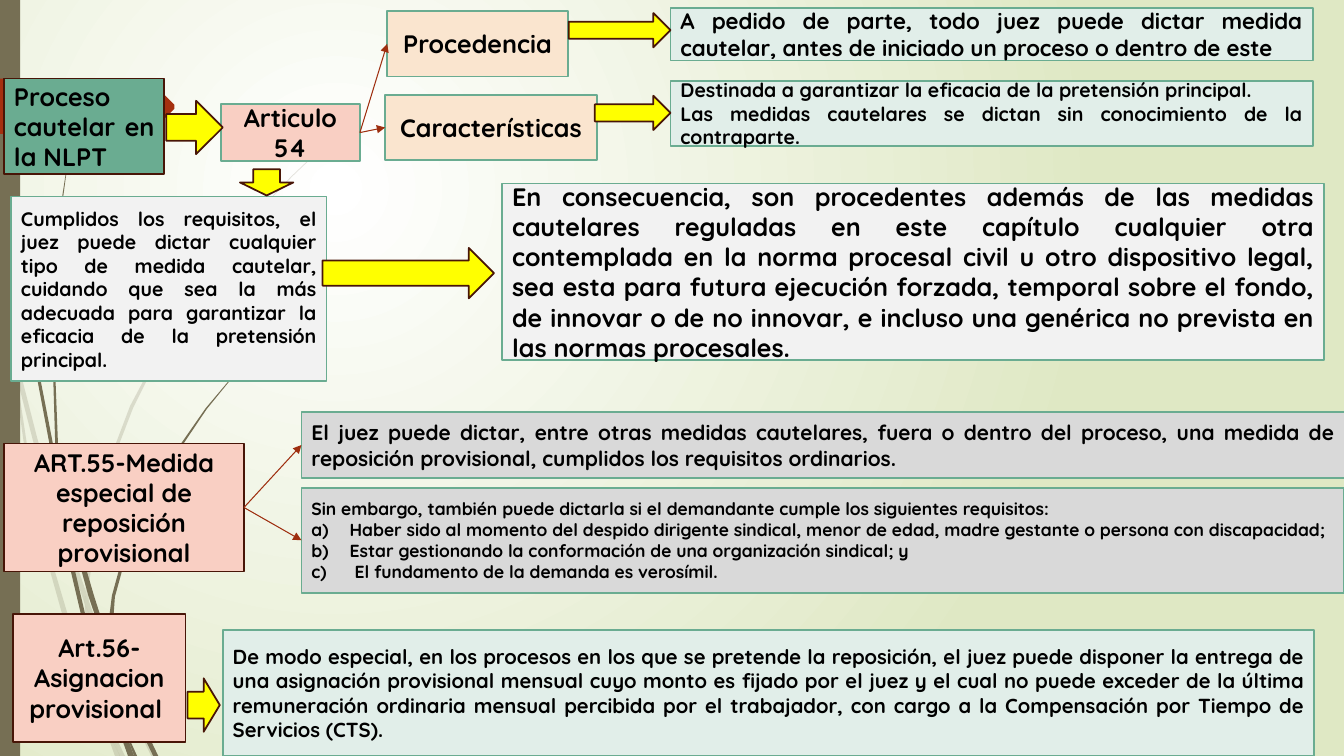
"""Builds a one-slide diagram of precautionary measures in labour procedure."""
from lxml import etree
from pptx import Presentation, util as u
from pptx.dml.color import RGBColor
from pptx.enum import shapes, text
from pptx.oxml.ns import qn

THEME = {
    "font": "Quicksand", "ink": "000000", "wisp": "766F54", "ribbon": "A53010",
    "green": "6AAC91", "pink": "F9CFC3", "peach": "FAE5CF", "mint": "E1EEE9",
    "pale": "F2F2F2", "gray": "D9D9D9", "yellow": "FFFF00", "dark": "481507",
    "link": "9E2E0F", "glow": "FFFFFF", "edge": "DFE8C4",
    "title": 18, "lead": 16, "order": 15, "grant": 14.5, "body": 14, "list": 12.5,
    "border": 1.25, "thin": 0.75,
}

BOXES = {
    "proceso": ((0.04, 0.78, 1.59, 0.95), "green", "dark", "title", "j",
                ["Proceso cautelar en la NLPT"]),
    "articulo": ((2.19, 1.03, 1.38, 0.57), "pink", "green", "title", "c", ["Articulo 54"]),
    "procedencia": ((3.84, 0.11, 1.79, 0.65), "peach", "green", "title", "c", ["Procedencia"]),
    "caracteristicas": ((3.82, 0.94, 2.1, 0.65), "peach", "green", "title", "c",
                        ["Características"]),
    "pedido": ((6.65, 0.08, 6.37, 0.52), "mint", "green", "lead", "j",
               ["A pedido de parte, todo juez puede dictar medida cautelar, antes de iniciado "
                "un proceso o dentro de este"]),
    "cumplidos": ((0.11, 1.95, 3.13, 1.83), "pale", "green", "body", "j",
                  ["Cumplidos los requisitos, el juez puede dictar cualquier tipo de medida "
                   "cautelar, cuidando que sea la más adecuada para garantizar la eficacia de "
                   "la pretensión principal."]),
    "consecuencia": ((4.98, 1.82, 8.15, 1.75), "pale", "green", "title", "j",
                     ["En consecuencia, son procedentes además de las medidas cautelares "
                      "reguladas en este capítulo cualquier otra contemplada en la norma procesal "
                      "civil u otro dispositivo legal, sea esta para futura ejecución forzada, "
                      "temporal sobre el fondo, de innovar o de no innovar, e incluso una genérica "
                      "no prevista en las normas procesales."]),
    "destinada": ((6.65, 0.8, 6.37, 0.65), "mint", "green", "body", "j",
                  ["Destinada a garantizar la eficacia de la pretensión principal.",
                   "Las medidas cautelares se dictan sin conocimiento de la contraparte."]),
    "reposicion": ((2.99, 4.09, 10.35, 0.65), "gray", "green", "order", "j",
                   ["El juez puede dictar, entre otras medidas cautelares, fuera o dentro del "
                    "proceso, una medida de reposición provisional, cumplidos los requisitos "
                    "ordinarios."]),
    "art55": ((0.04, 4.4, 2.38, 1.27), "pink", "dark", "title", "c",
              ["ART.55-Medida especial de reposición provisional"]),
    "art56": ((0.13, 6.09, 1.71, 1.27), "pink", "dark", "title", "c",
              ["Art.56-Asignacion provisional "]),
    "asignacion": ((2.21, 6.25, 10.82, 1.25), "mint", "green", "grant", "j",
                   ["De modo especial, en los procesos en los que se pretende la reposición, el "
                    "juez puede disponer la entrega de una asignación provisional mensual cuyo "
                    "monto es fijado por el juez y el cual no puede exceder de la última "
                    "remuneración ordinaria mensual percibida por el trabajador, con cargo a la "
                    "Compensación por Tiempo de Servicios (CTS)."]),
    "requisitos": ((2.99, 4.84, 10.34, 1.04), "gray", "green", "list", "j",
                   ["Sin embargo, también puede dictarla si el demandante cumple los siguientes "
                    "requisitos:",
                    ("Haber sido al momento del despido dirigente sindical, menor de edad, madre "
                     "gestante o persona con discapacidad;",),
                    ("Estar gestionando la conformación de una organización sindical; y",),
                    (" El fundamento de la demanda es verosímil.",)]),
}

LINKS = [("articulo", "caracteristicas"), ("articulo", "procedencia"),
         ("art55", "reposicion"), ("art55", "requisitos")]

ARROWS = [("RIGHT_ARROW", (1.65, 1, 0.56, 0.53)), ("RIGHT_ARROW", (5.9, 0.95, 0.75, 0.34)),
          ("DOWN_ARROW", (2.38, 1.68, 0.53, 0.26)), ("RIGHT_ARROW", (3.2, 2.46, 1.7, 0.5)),
          ("RIGHT_ARROW", (5.64, 0.13, 1.01, 0.34)), ("RIGHT_ARROW", (1.86, 6.73, 0.32, 0.53))]

PALE_WISPS = [
    [(0.11, 3.5), (0.09, 3.22), (0, 2.82), (0, 2.99), (0.1, 3.44)],
    [(0.58, 5.22), (0.84, 5.99), (0.85, 5.86), (0.62, 5.2), (0.37, 4.35), (0.14, 3.45),
     (0.17, 3.76), (0.36, 4.5)],
    [(0.92, 6.07), (0.88, 5.96), (0.88, 6.1), (1.23, 6.94), (1.5, 7.5), (1.55, 7.5),
     (1.27, 6.92)],
    [(1.19, 7.5), (1.24, 7.5), (1.05, 7.11)],
    [(0.93, 6.83), (0.7, 6.19), (0.48, 5.45), (0.31, 4.69), (0.17, 3.76), (0.11, 3.5),
     (0.28, 4.7), (0.44, 5.46), (0.65, 6.21), (0.92, 6.93), (1.01, 7.14)],
    [(0.84, 5.99), (0.87, 6.46), (0.93, 6.83), (1.05, 7.11), (0.91, 6.46), (0.88, 6.08)],
    [(0.88, 5.84), (0.95, 5.22), (1.1, 4.62), (1.32, 4.05), (1.6, 3.49), (1.92, 2.95),
     (2.29, 2.45), (2.68, 1.98), (2.9, 1.75), (3.12, 1.54), (3.12, 1.53), (2.89, 1.75),
     (2.68, 1.97), (2.28, 2.44), (1.9, 2.94), (1.58, 3.48), (1.29, 4.03), (1.07, 4.61),
     (0.91, 5.21), (0.85, 5.84), (0.88, 5.96)],
    [(1.01, 7.14), (1.14, 7.5), (1.19, 7.5)],
    [(0.88, 6.08), (0.88, 5.96), (0.85, 5.86), (0.84, 5.99)],
    [(0.96, 6.92), (0.93, 6.83), (1.01, 7.14), (1.19, 7.5), (1.05, 7.11)],
]
DARK_WISPS = [
    [(0.07, 1.1), (0.17, 2.33), (0.33, 3.55), (0.56, 4.77), (0.57, 4.81), (0.55, 4.53),
     (0.36, 3.55), (0.19, 2.32), (0.08, 1.09), (0.05, 0.48), (0.04, 0), (0.03, 0),
     (0.04, 0.48)],
    [(0.88, 5.92), (1.06, 6.45), (1.06, 6.31), (0.93, 5.9), (0.76, 5.32), (0.6, 4.72),
     (0.64, 5.05)],
    [(1.13, 6.49), (1.1, 6.41), (1.11, 6.56), (1.32, 7.08), (1.52, 7.5), (1.57, 7.5),
     (1.36, 7.06)],
    [(1.1, 6.91), (0.98, 6.57), (0.84, 6.07), (0.72, 5.56), (0.64, 5.05), (0.57, 4.77),
     (0.68, 5.57), (0.8, 6.08), (0.93, 6.59), (1.11, 7.08), (1.17, 7.22)],
    [(0.6, 4.72), (0.58, 4.53), (0.54, 3.49), (0.58, 2.45), (0.63, 1.93), (0.7, 1.41),
     (0.62, 1.93), (0.56, 2.45), (0.52, 3.49), (0.55, 4.49)],
    [(1.33, 7.5), (1.36, 7.5), (1.22, 7.19)],
    [(1.11, 6.33), (1.14, 5.92), (1.25, 5.52), (1.4, 5.13), (1.58, 4.76), (2.05, 4.06),
     (2.31, 3.74), (2.61, 3.44), (2.6, 3.44), (2.31, 3.73), (2.04, 4.05), (1.56, 4.74),
     (1.37, 5.12), (1.22, 5.51), (1.11, 5.91), (1.06, 6.31), (1.1, 6.41)],
    [(1.17, 7.22), (1.27, 7.5), (1.31, 7.5)],
    [(1.16, 7.06), (1.1, 6.91), (1.17, 7.22), (1.3, 7.5), (1.33, 7.5), (1.22, 7.19)],
]
RIBBON = [(0, 0.78), (1.46, 0.78), (1.48, 0.79), (1.73, 1.04), (1.73, 1.08), (1.48, 1.33),
          (1.46, 1.34), (0, 1.33)]
ALIGN = {"j": text.PP_ALIGN.JUSTIFY, "c": text.PP_ALIGN.CENTER}


def color(name):
    return RGBColor.from_string(THEME[name])


def child(parent, tag, **attributes):
    return etree.SubElement(parent, qn(tag), attributes)


def paint(shape, fill, border=None, opacity=None):
    shape.shadow.inherit = False
    shape.fill.solid()
    shape.fill.fore_color.rgb = color(fill)
    if opacity:
        child(shape.element.spPr.find(".//" + qn("a:srgbClr")), "a:alpha", val=str(opacity * 1000))
    if border:
        shape.line.color.rgb = color(border)
        shape.line.width = u.Pt(THEME["border"])
    else:
        shape.line.fill.background()
    return shape


def add_block(slide, kind, place, fill, border=None):
    block = slide.shapes.add_shape(shapes.MSO_SHAPE[kind], *map(u.Inches, place))
    return paint(block, fill, border)


def add_outline(slide, points, fill, opacity=None):
    start, *rest = [(u.Inches(x), u.Inches(y)) for x, y in points]
    builder = slide.shapes.build_freeform(*start)
    builder.add_line_segments(rest, close=True)
    paint(builder.convert_to_shape(), fill, opacity=opacity)


def write(paragraph, words, *, size, align, lettered=False):
    paragraph.alignment = ALIGN[align]
    run = paragraph.add_run()
    run.text = words
    run.font.name, run.font.bold = THEME["font"], True
    run.font.size = u.Pt(THEME[size])
    run.font.color.rgb = color("ink")
    if lettered:
        properties = paragraph._p.get_or_add_pPr()
        properties.set("marL", str(u.Inches(0.38)))
        properties.set("indent", str(-u.Inches(0.38)))
        child(properties, "a:buFont", typeface=THEME["font"])
        child(properties, "a:buAutoNum", type="alphaLcParenR")


def add_box(slide, place, fill, border, size, align, lines):
    box = add_block(slide, "RECTANGLE", place, fill, border)
    frame = box.text_frame
    frame.word_wrap = True
    frame.vertical_anchor = text.MSO_ANCHOR.MIDDLE
    for index, line in enumerate(lines):
        paragraph = frame.add_paragraph() if index else frame.paragraphs[0]
        lettered = isinstance(line, tuple)
        write(paragraph, line[0] if lettered else line, size=size, align=align, lettered=lettered)
    return box


def add_link(slide, source, target):
    link = slide.shapes.add_connector(shapes.MSO_CONNECTOR.STRAIGHT, 0, 0, 0, 0)
    link.begin_connect(source, 3)
    link.end_connect(target, 1)
    link.line.color.rgb = color("link")
    link.line.width = u.Pt(THEME["thin"])
    child(link.line._get_or_add_ln(), "a:tailEnd", type="triangle")
    child(link._element.spPr, "a:effectLst")


def add_background(slide):
    fill = slide.background.fill
    fill.gradient()
    for stop, name in zip(fill.gradient_stops, ("glow", "edge")):
        stop.color.rgb = color(name)
    first, last = fill.gradient_stops
    first.position, last.position = 0, 1
    linear = slide.element.find(".//" + qn("a:lin"))
    gradient = linear.getparent()
    gradient.remove(linear)
    circle = child(gradient, "a:path", path="circle")
    child(circle, "a:fillToRect", l="50000", t="50000", r="100000", b="100000")


def main():
    deck = Presentation()
    deck.slide_width, deck.slide_height = u.Inches(13.33), u.Inches(7.5)
    slide = deck.slides.add_slide(deck.slide_layouts[6])
    add_background(slide)
    for wisps, opacity in ((PALE_WISPS, 20), (DARK_WISPS, None)):
        for points in wisps:
            add_outline(slide, points, "wisp", opacity)
    add_block(slide, "RECTANGLE", (0, 0, 0.2, 7.5), "wisp")
    add_outline(slide, RIBBON, "ribbon")
    boxes = {name: add_box(slide, *content) for name, content in BOXES.items()}
    for source, target in LINKS:
        add_link(slide, boxes[source], boxes[target])
    for kind, place in ARROWS:
        add_block(slide, kind, place, "yellow", "dark")
    deck.save("out.pptx")


if __name__ == "__main__":
    main()
